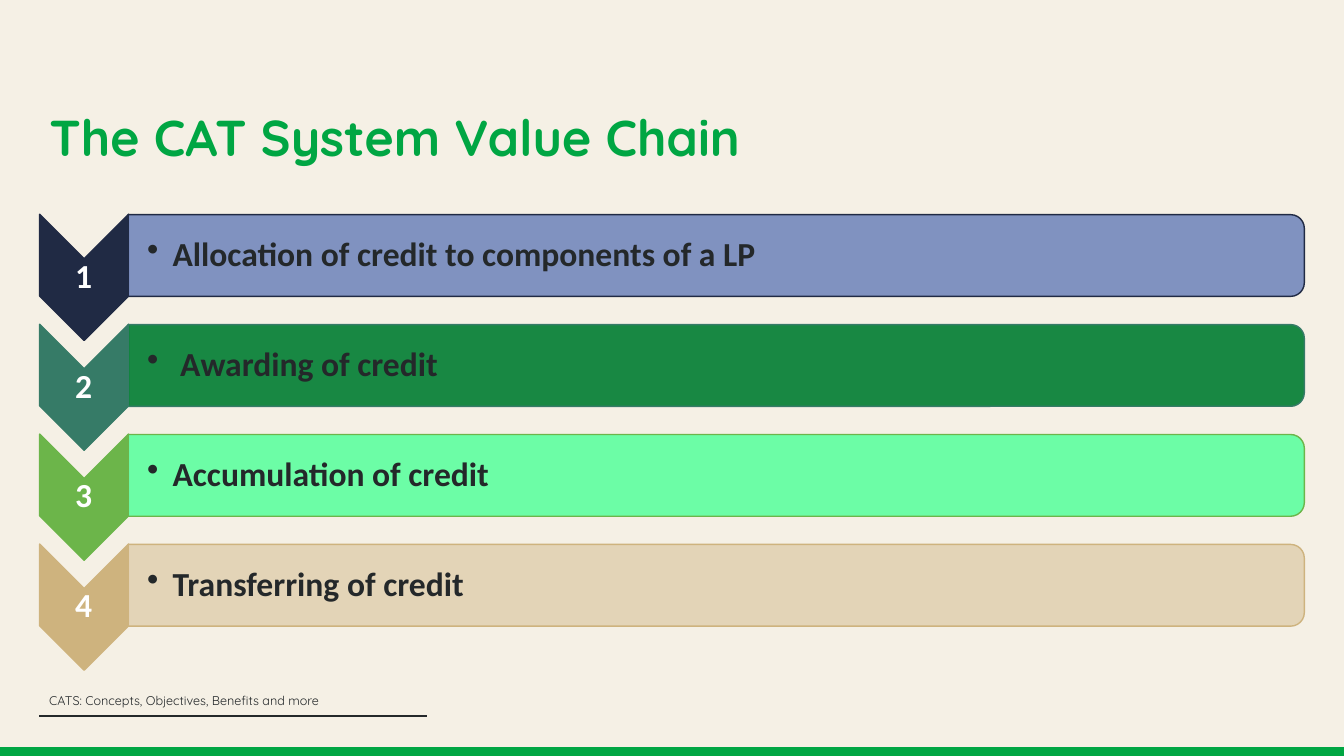
from lxml.etree import SubElement
from pptx import Presentation
from pptx.dml.color import RGBColor
from pptx.enum.shapes import MSO_CONNECTOR as Connector, MSO_SHAPE as Shape
from pptx.enum.text import MSO_ANCHOR as Anchor, PP_ALIGN as Align
from pptx.oxml.ns import qn
from pptx.util import Cm, Pt

GREEN, INK, WHITE = "00A643", "24282A", "FFFFFF"
FIRST_ROW, ROW_PITCH = 6.44, 2.77
STEPS = [
    ("Allocation of credit to components of a LP", "202A44", "7488BD"),
    (" Awarding of credit", "367B67", "007D32"),
    ("Accumulation of credit", "6CB54A", "5EFFA0"),
    ("Transferring of credit", "CEB37E", "E2D1B2"),
]


def colour(hex_text):
    return RGBColor.from_string(hex_text)


def add_span(para, text, font, size, ink, bold=False):
    span = para.add_run()
    span.text = text
    span.font.name = font
    span.font.size = Pt(size)
    span.font.bold = bold
    span.font.color.rgb = colour(ink)


def add_box(page, left, top, width, height, insets=None):
    box = page.shapes.add_textbox(Cm(left), Cm(top), Cm(width), Cm(height))
    frame = box.text_frame
    frame.word_wrap = True
    frame.vertical_anchor = Anchor.MIDDLE
    if insets:
        frame.margin_left, frame.margin_top, frame.margin_right, frame.margin_bottom = map(Cm, insets)
    return frame.paragraphs[0]


def add_block(page, kind, centre_x, centre_y, width, height, fill, line=None):
    block = page.shapes.add_shape(
        kind, Cm(centre_x - width / 2), Cm(centre_y - height / 2), Cm(width), Cm(height))
    block.shadow.inherit = False
    block.fill.solid()
    block.fill.fore_color.rgb = colour(fill)
    if line:
        block.line.color.rgb = colour(line)
        block.line.width = Pt(1)
    else:
        block.line.fill.background()
    return block


def set_opacity(block, percent):
    tint = block.fill._xPr.find(qn("a:solidFill")).find(qn("a:srgbClr"))
    SubElement(tint, qn("a:alpha")).set("val", str(percent * 1000))


def add_bullet(para):
    settings = para._p.get_or_add_pPr()
    settings.set("marL", str(Cm(0.64)))
    settings.set("indent", str(Cm(-0.64)))
    SubElement(settings, qn("a:buChar")).set("char", "•")


def add_step(page, number, text, dark, light):
    middle = FIRST_ROW + (number - 1) * ROW_PITCH

    chevron = add_block(page, Shape.CHEVRON, 2.12, middle + 0.55, 3.18, 2.24, dark, dark)
    chevron.rotation = 90
    label = add_box(page, 0.99, middle + 0.06, 2.24, 0.97, (0.05, 0.05, 0.05, 0.05))
    label.alignment = Align.CENTER
    label.line_spacing = 0.9
    add_span(label, str(number), "Calibri", 24, WHITE, True)

    bar = add_block(page, Shape.ROUND_2_SAME_RECTANGLE, 18.05, middle, 2.06, 29.64, light, dark)
    bar.rotation = 90
    set_opacity(bar, 90)
    item = add_box(page, 3.23, middle - 0.93, 29.54, 1.86, (0.48, 0.05, 0.05, 0.05))
    item.level = 1
    add_bullet(item)
    item.line_spacing = 0.9
    add_span(item, text, "Calibri", 24, INK, True)


def add_title(page, text):
    title = page.shapes.title
    title.left, title.top, title.width, title.height = Cm(0.99), Cm(1.7), Cm(31.85), Cm(3.68)
    title.text_frame.vertical_anchor = Anchor.MIDDLE
    para = title.text_frame.paragraphs[0]
    para.alignment = Align.LEFT
    para.line_spacing = 0.9
    add_span(para, text, "Quicksand", 36, GREEN, True)


def add_rule(page, left, right, height):
    rule = page.shapes.add_connector(
        Connector.STRAIGHT, Cm(left), Cm(height), Cm(right), Cm(height))
    rule.line.color.rgb = colour(INK)
    rule.line.width = Pt(1.5)
    SubElement(rule._element.spPr, qn("a:effectLst"))


def main():
    deck = Presentation()
    deck.slide_width, deck.slide_height = Cm(33.87), Cm(19.05)
    page = deck.slides.add_slide(deck.slide_layouts[5])
    page.background.fill.solid()
    page.background.fill.fore_color.rgb = colour("F5F0E5")

    add_block(page, Shape.RECTANGLE, 16.94, 18.99, 34.04, 0.33, GREEN)
    add_rule(page, 0.99, 10.77, 18.05)
    add_title(page, "The CAT System Value Chain")
    for number, step in enumerate(STEPS, 1):
        add_step(page, number, *step)
    footer = add_box(page, 0.99, 17.42, 10.31, 0.48)
    add_span(footer, "CATS: Concepts, Objectives, Benefits and more", "Quicksand", 9, INK)

    deck.save("out.pptx")


if __name__ == "__main__":
    main()
